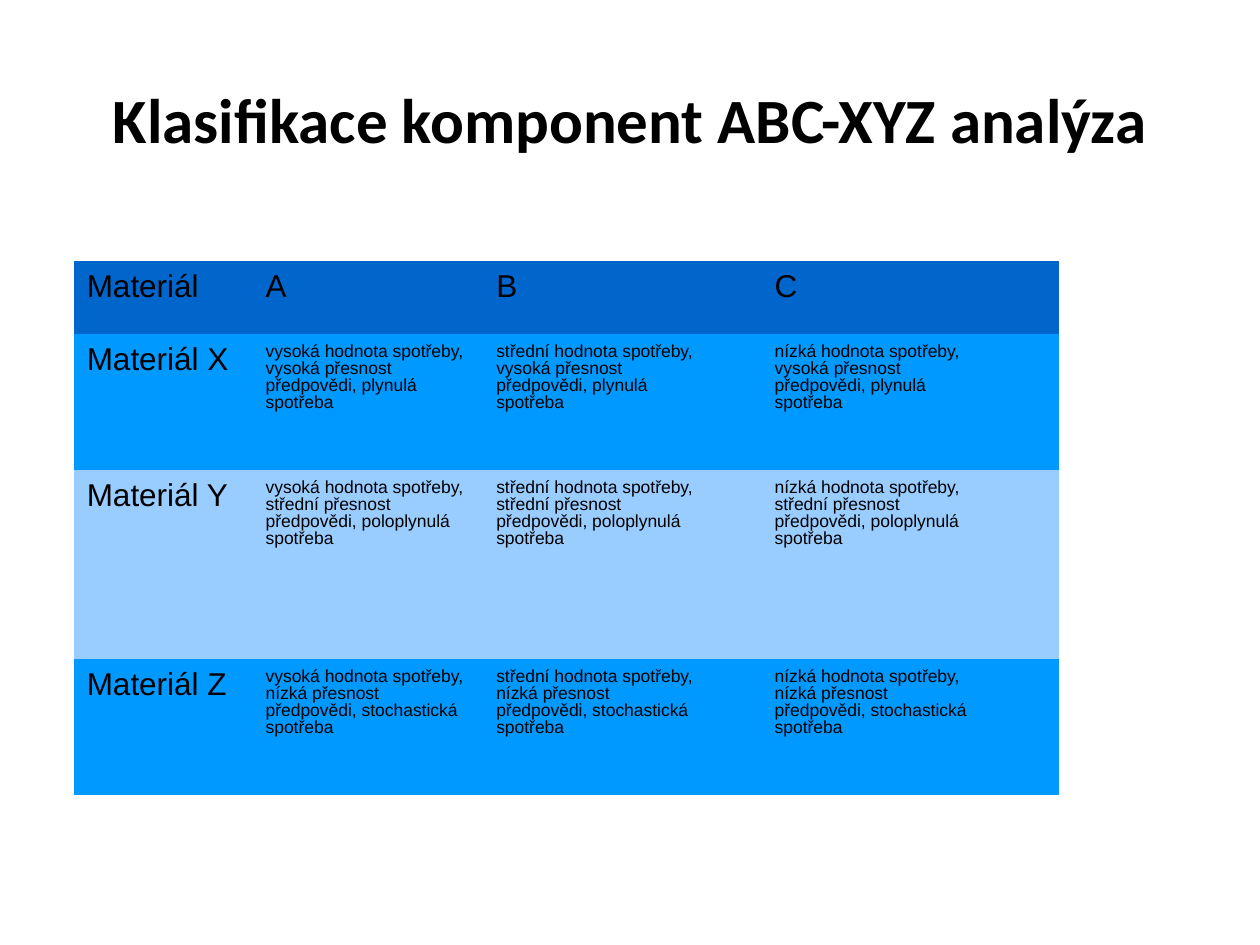
from pptx import Presentation as Deck
from pptx.dml.color import RGBColor as Rgb
from pptx.enum.text import MSO_ANCHOR as Anchor, PP_ALIGN as Align
from pptx.util import Pt

COLORS = {"text": "000000", "head": "0066CC", "dark": "0099FF", "light": "99CCFF"}
NO_GRID = "{2D5ABB26-0587-4C30-8999-92F81FD0307C}"

# Table content: value classes across, accuracy classes down
HEADS = ["Materiál", "A", "B", "C"]
VALUES = ["vysoká", "střední", "nízká"]
GROUPS = [
    ("X", "vysoká", "plynulá"),
    ("Y", "střední", "poloplynulá"),
    ("Z", "nízká", "stochastická"),
]
COLS = [102.2, 131.8, 159.1, 169.9]
ROWS = [41.7, 77.6, 108, 77.6]
FILLS = ["head", "dark", "light", "dark"]


def put_text(frame, text, size=18, face="Arial", bold=False, align=Align.LEFT, space=None):
    """Write each line of the text as a paragraph of its own."""
    for i, line in enumerate(text.split("\n")):
        par = frame.add_paragraph() if i else frame.paragraphs[0]
        par.alignment = align
        if space:
            par.line_spacing = space
        run = par.add_run()
        run.text = line
        font = run.font
        font.size, font.name, font.bold = Pt(size), face, bold
        font.color.rgb = Rgb.from_string(COLORS["text"])


class Page:
    def __init__(self, deck):
        self.slide = deck.slides.add_slide(deck.slide_layouts[6])
        self.face = "Arial"
        self.space = 0.87

    def title(self, text, left, top, width, height):
        box = self.slide.shapes.add_textbox(Pt(left), Pt(top), Pt(width), Pt(height))
        frame = box.text_frame
        frame.word_wrap = True
        frame.vertical_anchor = Anchor.MIDDLE
        frame.margin_left = frame.margin_right = frame.margin_bottom = 0
        frame.margin_top = Pt(2)
        put_text(frame, text, size=36, face="Calibri", bold=True, align=Align.CENTER)

    def table(self, data, left, top, cols, rows, fills):
        shape = self.slide.shapes.add_table(
            len(rows), len(cols), Pt(left), Pt(top), Pt(sum(cols)), Pt(sum(rows)))
        grid = shape.table
        grid.first_row = grid.horz_banding = False
        grid._tbl.tblPr[0].text = NO_GRID  # no borders
        for col, width in zip(grid.columns, cols):
            col.width = Pt(width)
        for row, height, line, fill in zip(grid.rows, rows, data, fills):
            row.height = Pt(height)
            for cell, text in zip(row.cells, line):
                self.cell(cell, text, fill)

    def cell(self, cell, text, fill):
        small = "\n" in text
        cell.fill.solid()
        cell.fill.fore_color.rgb = Rgb.from_string(COLORS[fill])
        cell.margin_left = cell.margin_right = Pt(7.2)
        cell.margin_top = Pt(5.6 if small else 7)
        cell.margin_bottom = Pt(3.6)
        put_text(cell.text_frame, text, size=10 if small else 18,
                 face=self.face, space=self.space)


def main():
    deck = Deck()
    deck.slide_width, deck.slide_height = Pt(720), Pt(540)
    page = Page(deck)

    # Title
    page.title("Klasifikace komponent ABC-XYZ analýza", 36, 21.6, 648, 90)

    # Classification table
    data = [HEADS]
    for name, level, flow in GROUPS:
        notes = [f"{value} hodnota spotřeby,\n{level} přesnost\npředpovědi, {flow}\nspotřeba"
                 for value in VALUES]
        data.append([f"Materiál {name}"] + notes)
    page.table(data, 42.4, 149.2, COLS, ROWS, FILLS)

    deck.save("out.pptx")


if __name__ == "__main__":
    main()
